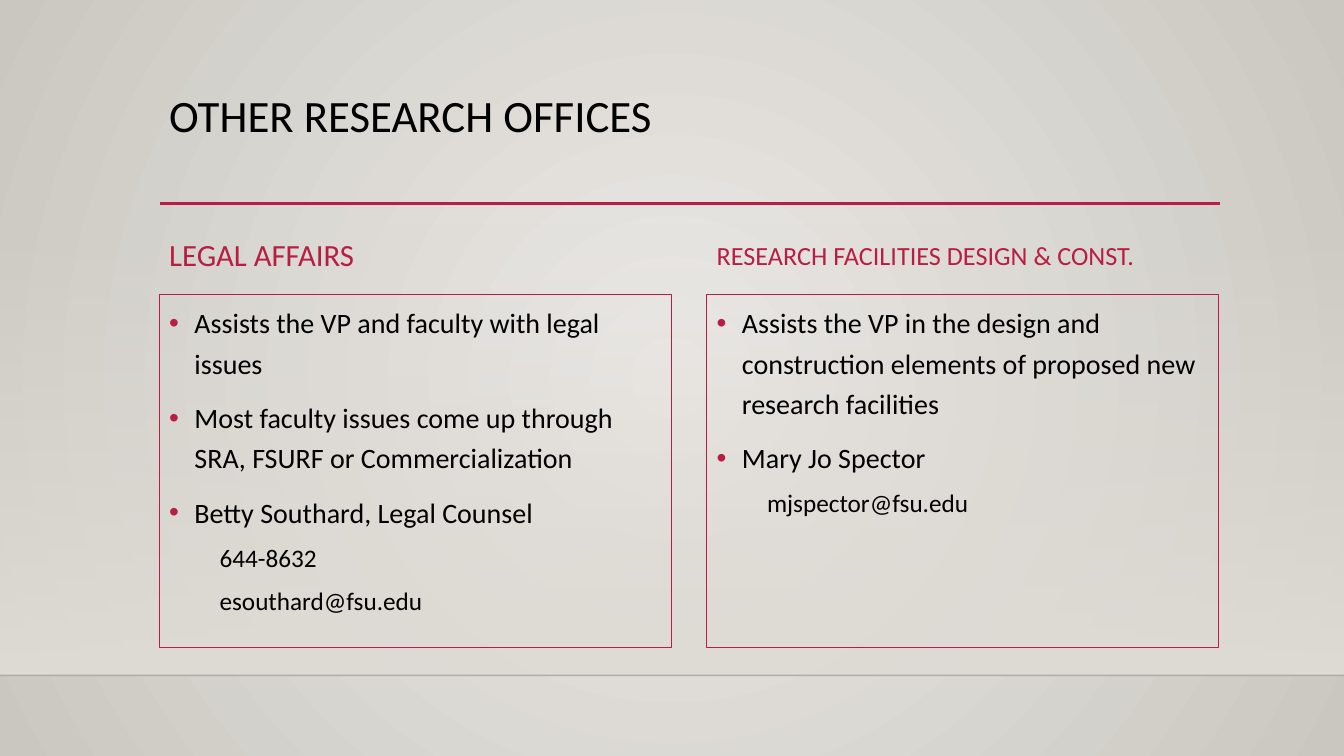
import pptx
import pptx.util
import pptx.oxml
import pptx.oxml.ns
import pptx.dml.color
import pptx.enum.shapes
import pptx.enum.text
from lxml import etree

Inches, Pt = pptx.util.Inches, pptx.util.Pt
qn = pptx.oxml.ns.qn
Anchor = pptx.enum.text.MSO_ANCHOR
RED, BLACK, SAND = "B71E42", "000000", "DFDBD5"


def paint(text):
    return pptx.dml.color.RGBColor.from_string(text)


def fade(part, share):
    color = next(part.iter(qn("a:srgbClr")))
    etree.SubElement(color, qn("a:alpha"), val=str(share * 1000))


def blend(fill, start, end):
    fill.gradient()
    for stop, tone, place in zip(fill.gradient_stops, (start, end), (0, 1)):
        stop.color.rgb = paint(tone)
        stop.position = place


class Deck:
    def __init__(self, font):
        self.font = font
        self.show = pptx.Presentation()
        self.show.slide_width = Inches(13.33)
        self.show.slide_height = Inches(7.5)
        self.slide = self.show.slides.add_slide(self.show.slide_layouts[6])

    def backdrop(self, inner, outer):
        blend(self.slide.background.fill, inner, outer)
        grad = next(self.slide._element.iter(qn("a:gradFill")))
        grad.remove(grad.find(qn("a:lin")))
        glow = etree.SubElement(grad, qn("a:path"), path="circle")
        etree.SubElement(glow, qn("a:fillToRect"),
                         {side: "50000" for side in "ltrb"})

    def band(self, top, height, tone):
        shape = self.slide.shapes.add_shape(
            pptx.enum.shapes.MSO_SHAPE.RECTANGLE,
            0, Inches(top), self.show.slide_width, Inches(height))
        shape.shadow.inherit = False
        shape.line.fill.background()
        blend(shape.fill, tone, tone)
        shape.fill.gradient_angle = 270
        fade(shape._element.spPr, 0)

    def rule(self, left, right, top, tone, width, share=100):
        line = self.slide.shapes.add_connector(
            pptx.enum.shapes.MSO_CONNECTOR.STRAIGHT,
            Inches(left), Inches(top), Inches(right), Inches(top))
        line.line.color.rgb = paint(tone)
        line.line.width = Pt(width)
        if share < 100:
            fade(line._element.spPr, share)
        etree.SubElement(line._element.spPr, qn("a:effectLst"))

    def box(self, left, top, width, height, anchor=Anchor.TOP):
        box = self.slide.shapes.add_textbox(
            Inches(left), Inches(top), Inches(width), Inches(height))
        box.text_frame.word_wrap = True
        box.text_frame.vertical_anchor = anchor
        return box

    def add_text(self, para, text, size, tone):
        run = para.add_run()
        run.text = text
        run.font.name = self.font
        run.font.size = Pt(size)
        run.font.color.rgb = paint(tone)

    def label(self, place, text, size, tone, anchor=Anchor.TOP, space=0.9):
        para = self.box(*place, anchor).text_frame.paragraphs[0]
        para.line_spacing = space
        self.add_text(para, text, size, tone)

    def panel(self, place, items, edge):
        box = self.box(*place)
        box.line.color.rgb = paint(edge)
        box.line.width = Pt(0.75)
        frame = box.text_frame
        for index, (level, text) in enumerate(items):
            para = frame.add_paragraph() if index else frame.paragraphs[0]
            para.level = level
            para.line_spacing = 1.2
            para.space_before = Pt((5 if level else 10) if index else 0)
            self.indent(para, level, edge)
            self.add_text(para, text, 18 if level else 20, BLACK)

    def indent(self, para, level, tone):
        props = para._p.get_or_add_pPr()
        props.set("marL", str(Inches(0.5 if level else 0.25)))
        props.set("indent", str(0 if level else Inches(-0.25)))
        if level:
            etree.SubElement(props, qn("a:buNone"))
            return
        color = etree.SubElement(props, qn("a:buClr"))
        etree.SubElement(color, qn("a:srgbClr"), val=tone)
        etree.SubElement(props, qn("a:buFont"), typeface="Arial")
        etree.SubElement(props, qn("a:buChar"), char="•")


def main():
    deck = Deck("Calibri")
    deck.backdrop("ECEAE7", "CAC7C1")
    deck.band(2.21, 4.49, SAND)
    deck.rule(0, 13.33, 6.7, "000001", 1, 20)
    deck.rule(1.59, 12.1, 2.02, RED, 2.5)
    deck.label((1.58, 0.88, 10.51, 1.16), "OTHER RESEARCH OFFICES", 32, BLACK)

    offices = [
        (1.58, "LEGAL AFFAIRS", 22, 1, 0.54, [
            (0, "Assists the VP and faculty with legal issues"),
            (0, "Most faculty issues come up through SRA, FSURF or "
                "Commercialization"),
            (0, "Betty Southard, Legal Counsel"),
            (1, "644-8632"),
            (1, "esouthard@fsu.edu")]),
        (7.01, "RESEARCH FACILITIES DESIGN & CONST.", 18.7, 0.9, 0.53, [
            (0, "Assists the VP in the design and construction elements of "
                "proposed new research facilities"),
            (0, "Mary Jo Spector"),
            (1, "mjspector@fsu.edu")]),
    ]
    for left, name, size, space, height, items in offices:
        deck.label((left, 2.21, 5.08, height), name, size, RED,
                   Anchor.BOTTOM, space)
        deck.panel((left, 2.92, 5.08, 3.5), items, RED)
    deck.show.save("out.pptx")


if __name__ == "__main__":
    main()
